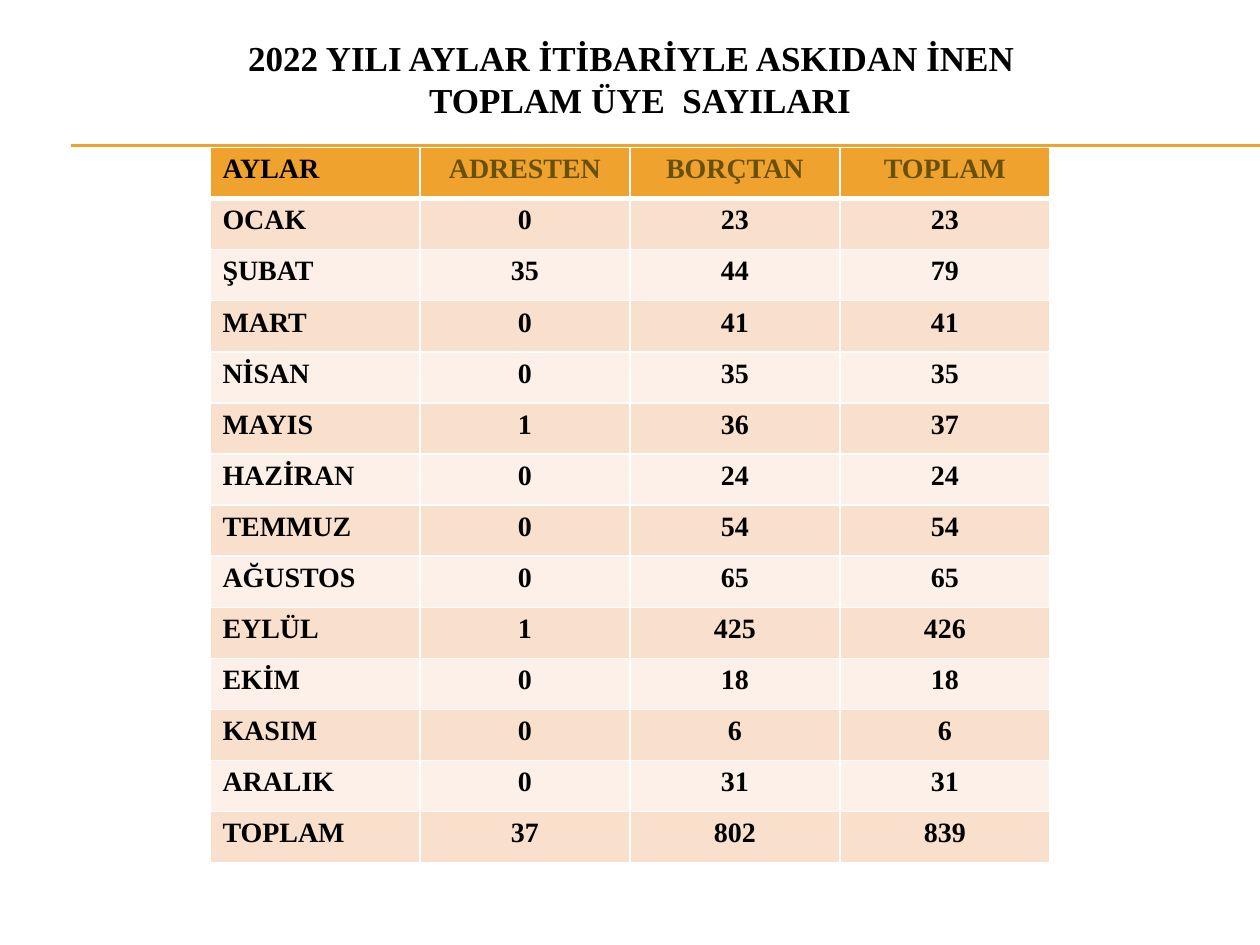
import pptx
import pptx.util
import pptx.dml.color
import pptx.enum.shapes
import pptx.enum.text
import pptx.oxml
import pptx.oxml.ns
from lxml import etree

RGB = pptx.dml.color.RGBColor
ORANGE = RGB(0xF0, 0xA2, 0x2E)
BROWN = RGB(0x69, 0x50, 0x08)
PEACH = RGB(0xF9, 0xE0, 0xCD)
CREAM = RGB(0xFC, 0xF0, 0xE8)
BLACK = RGB(0, 0, 0)
WHITE = RGB(0xFF, 0xFF, 0xFF)
FONT = "Times New Roman"

W, H = pptx.util.Inches(10), pptx.util.Inches(7.5)
TITLE = ["2022 YILI AYLAR İTİBARİYLE ASKIDAN İNEN  ", "TOPLAM ÜYE  SAYILARI"]
HEADER = ["AYLAR", "ADRESTEN", "BORÇTAN", "TOPLAM"]
# Month, members reinstated by address, by debt
MONTHS = [
    ("OCAK", 0, 23), ("ŞUBAT", 35, 44), ("MART", 0, 41), ("NİSAN", 0, 35),
    ("MAYIS", 1, 36), ("HAZİRAN", 0, 24), ("TEMMUZ", 0, 54), ("AĞUSTOS", 0, 65),
    ("EYLÜL", 1, 425), ("EKİM", 0, 18), ("KASIM", 0, 6), ("ARALIK", 0, 31),
]


def add_run(p, text, size, color):
    r = p.add_run()
    r.text = text
    r.font.name = FONT
    r.font.size = pptx.util.Pt(size)
    r.font.bold = True
    r.font.color.rgb = color


def add_rule(s, y):
    """Horizontal line from the left margin to the slide's right edge."""
    y = pptx.util.Inches(y)
    line = s.shapes.add_connector(
        pptx.enum.shapes.MSO_CONNECTOR.STRAIGHT, int(W * 0.056), y, W, y)
    line.line.color.rgb = ORANGE
    line.line.width = pptx.util.Pt(0.75)
    etree.SubElement(line._element.spPr, pptx.oxml.ns.qn("a:effectLst"))


def add_title(s, lines):
    Inches = pptx.util.Inches
    sp = s.shapes.add_textbox(Inches(0.33), Inches(0.16), Inches(9.5), Inches(0.92))
    tf = sp.text_frame
    tf.word_wrap = True
    tf.vertical_anchor = pptx.enum.text.MSO_ANCHOR.MIDDLE
    p = tf.paragraphs[0]
    p.alignment = pptx.enum.text.PP_ALIGN.CENTER
    for i, text in enumerate(lines):
        if i:
            p.add_line_break()
        add_run(p, text, 20, BLACK)


def set_borders(cell, top, bottom):
    tcPr = cell._tc.get_or_add_tcPr()
    sides = [("lnL", 1), ("lnR", 1), ("lnT", top), ("lnB", bottom)]
    for i, (side, width) in enumerate(sides):
        tcPr.insert(i, pptx.oxml.parse_xml(
            f'<a:{side} {pptx.oxml.ns.nsdecls("a")} w="{pptx.util.Pt(width)}">'
            f'<a:solidFill><a:srgbClr val="{WHITE}"/></a:solidFill></a:{side}>'))


def fill_cell(cell, text, row, col):
    cell.fill.solid()
    cell.fill.fore_color.rgb = ORANGE if row == 0 else PEACH if row % 2 else CREAM
    # A thick line separates the header from the first month
    set_borders(cell, 3 if row == 1 else 1, 3 if row == 0 else 1)
    p = cell.text_frame.paragraphs[0]
    if col:
        p.alignment = pptx.enum.text.PP_ALIGN.CENTER
    add_run(p, text, 16, BROWN if row == 0 and col else BLACK)


def add_member_table(s, rows):
    width, height = W * 2 // 3, pptx.util.Inches(5.68)
    table = s.shapes.add_table(
        len(rows), len(rows[0]), (W - width) // 2, pptx.util.Inches(1.17),
        width, height).table
    for i, values in enumerate(rows):
        table.rows[i].height = height // len(rows)
        for j, value in enumerate(values):
            fill_cell(table.cell(i, j), str(value), i, j)


def main():
    prs = pptx.Presentation()
    prs.slide_width, prs.slide_height = W, H
    s = prs.slides.add_slide(prs.slide_layouts[6])

    # Double rule under the title
    for y in (1.15, 1.16):
        add_rule(s, y)

    # Monthly counts with row and column totals
    counts = MONTHS + [("TOPLAM", sum(m[1] for m in MONTHS), sum(m[2] for m in MONTHS))]
    add_member_table(s, [HEADER] + [[name, a, b, a + b] for name, a, b in counts])

    # Title
    add_title(s, TITLE)
    prs.save("out.pptx")


if __name__ == "__main__":
    main()
